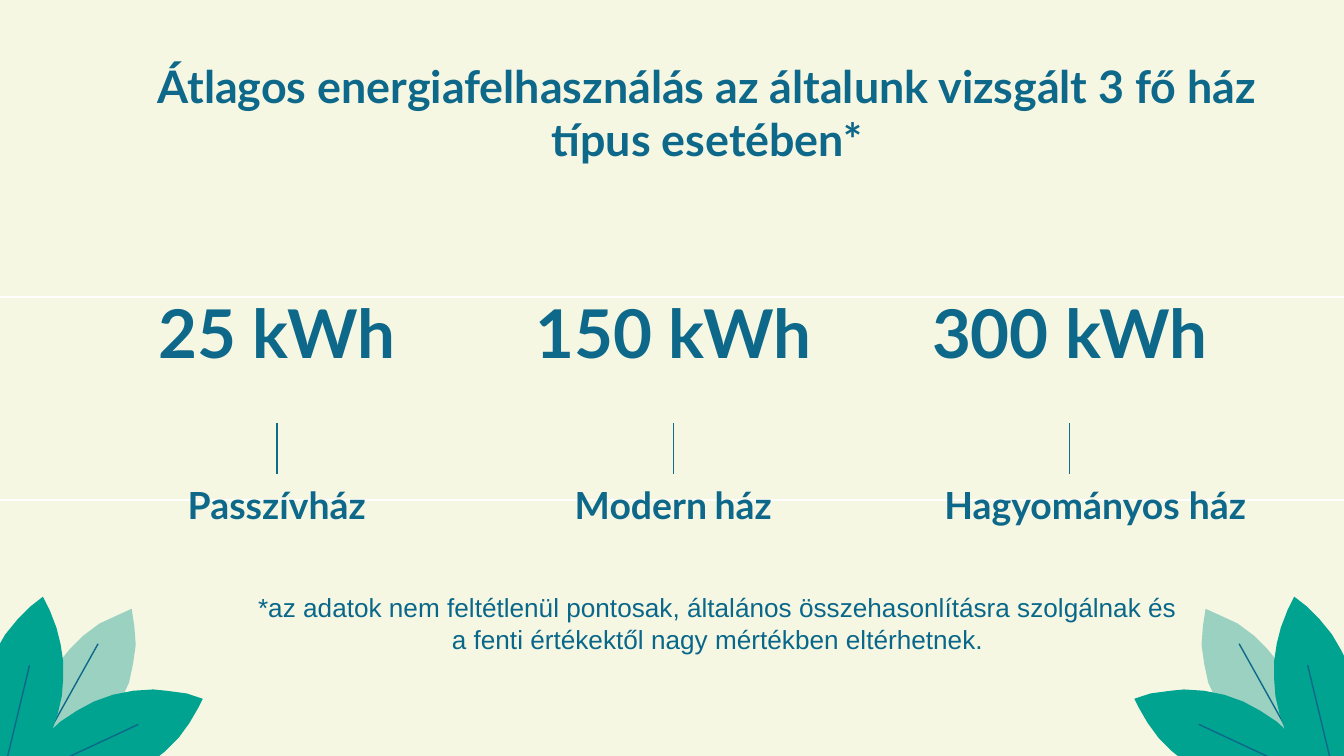
from pptx import Presentation
from pptx.dml.color import RGBColor
from pptx.enum.shapes import MSO_CONNECTOR
from pptx.enum.text import MSO_ANCHOR, PP_ALIGN
from pptx.oxml.ns import qn
from pptx.util import Inches, Pt

STRAIGHT = MSO_CONNECTOR.STRAIGHT
CENTER = PP_ALIGN.CENTER
TOP, MIDDLE = MSO_ANCHOR.TOP, MSO_ANCHOR.MIDDLE

# Content
TITLE = "Átlagos energiafelhasználás az általunk vizsgált 3 fő ház típus esetében*"
NOTE = ("*az adatok nem feltétlenül pontosak, általános összehasonlításra "
        "szolgálnak és a fenti értékektől nagy mértékben eltérhetnek.")
# Value, value box size, label runs, label box width
HOUSES = [
    ("25 kWh", (1.96, 0.56), ["Passzívház"], 1.96),
    ("150 kWh", (2.34, 0.71), ["Modern", " ", "ház"], 1.96),
    ("300 kWh", (2.34, 0.71), ["Hagyományos ház"], 2.34),
]

# Colours
CREAM, WHITE, BLACK = "F6F7E3", "FFFFFF", "000000"
BLUE, RULE_BLUE, NOTE_BLUE = "0D6889", "116C8B", "09678A"
MINT, GREEN = "9AD1C1", "00A290"

# Left-corner leaves: fill, outline, vein; the right corner is their mirror
MIRROR_SUM = 9.95
LEAVES = [
    (MINT,
     [(0.98, 4.53), (0.87, 4.58), (0.74, 4.64), (0.62, 4.73), (0.52, 4.83),
      (0.43, 4.94), (0.36, 5.06), (0.31, 5.19), (0.27, 5.33), (0.26, 5.47),
      (0.26, 5.61), (0.28, 5.74), (0.40, 5.69), (0.53, 5.63), (0.64, 5.54),
      (0.75, 5.45), (0.83, 5.33), (0.90, 5.21), (0.96, 5.08), (0.99, 4.94),
      (1.01, 4.80), (1.00, 4.66)],
     [(0.20, 5.74), (0.73, 4.79)]),
    (GREEN,
     [(0.32, 4.44), (0.23, 4.51), (0.13, 4.61), (0.04, 4.72), (-0.03, 4.84),
      (-0.09, 4.96), (-0.12, 5.09), (-0.15, 5.22), (-0.15, 5.36),
      (-0.14, 5.49), (-0.11, 5.63), (-0.08, 5.74), (0.19, 5.74), (0.26, 5.65),
      (0.33, 5.54), (0.39, 5.43), (0.43, 5.31), (0.46, 5.18), (0.47, 5.05),
      (0.47, 4.92), (0.45, 4.79), (0.42, 4.67), (0.37, 4.54)],
     [(0.03, 5.74), (0.22, 4.95)]),
    (GREEN,
     [(1.14, 5.13), (0.99, 5.14), (0.84, 5.17), (0.70, 5.22), (0.57, 5.29),
      (0.45, 5.37), (0.34, 5.47), (0.24, 5.58), (0.15, 5.74), (1.03, 5.73),
      (1.13, 5.67), (1.23, 5.59), (1.33, 5.49), (1.41, 5.38), (1.48, 5.26),
      (1.51, 5.20), (1.39, 5.16), (1.24, 5.14)],
     [(0.28, 5.74), (1.03, 5.39)]),
]


def rgb(color):
    return RGBColor.from_string(color)


def add_line(s, start, end, color):
    c = s.shapes.add_connector(STRAIGHT, *map(Inches, (*start, *end)))
    c.line.color.rgb = rgb(color)
    c.line.width = Pt(0.75)
    sp_pr = c._element.spPr
    sp_pr.append(sp_pr.makeelement(qn("a:effectLst"), {}))


def add_leaf(s, points, color):
    points = [(Inches(x), Inches(y)) for x, y in points]
    builder = s.shapes.build_freeform(*points[0])
    builder.add_line_segments(points[1:], close=True)
    sp = builder.convert_to_shape()
    sp.shadow.inherit = False
    sp.fill.solid()
    sp.fill.fore_color.rgb = rgb(color)
    sp.line.fill.background()


def place_text(sp, box, anchor, inset=0):
    sp.left, sp.top, sp.width, sp.height = map(Inches, box)
    tf = sp.text_frame
    tf.word_wrap = True
    tf.vertical_anchor = anchor
    tf.margin_left = tf.margin_right = Inches(inset)
    tf.margin_top = tf.margin_bottom = Inches(inset)
    p = tf.paragraphs[0]
    p.alignment = CENTER
    return p


def add_text(s, box, anchor, inset=0):
    return place_text(s.shapes.add_textbox(0, 0, 0, 0), box, anchor, inset)


def add_run(p, text, size, color=BLUE, font="Lato", bold=True):
    r = p.add_run()
    r.text = text
    r.font.size = Pt(size)
    r.font.name = font
    r.font.bold = bold
    r.font.color.rgb = rgb(color)


# Slide, 16:9
prs = Presentation()
prs.slide_width = Inches(10)
prs.slide_height = prs.slide_width * 9 // 16
s = prs.slides.add_slide(prs.slide_layouts[5])
s.background.fill.solid()
s.background.fill.fore_color.rgb = rgb(CREAM)

# Background rules
for y in (2.21, 3.72):
    add_line(s, (-0.07, y), (10.09, y), WHITE)

# Corner leaves
for mirrored in (False, True):
    for color, outline, vein in LEAVES:
        if mirrored:
            outline, vein = ([(MIRROR_SUM - x, y) for x, y in pts]
                             for pts in (outline, vein))
        add_leaf(s, outline, color)
        add_line(s, *vein, BLUE)

# Title
p = place_text(s.shapes.title, (1.08, 0.36, 8.36, 0.95), MIDDLE)
add_run(p, TITLE, 24)

# House columns: value, rule, label
LEFT, PITCH, COLUMN_W, VALUE_MID = 1.08, 2.95, 1.96, 2.47
for i, (value, (w, h), label, label_w) in enumerate(HOUSES):
    left = LEFT + i * PITCH
    mid = left + COLUMN_W / 2
    p = add_text(s, (mid - w / 2, VALUE_MID - h / 2, w, h), MIDDLE, 0.05)
    add_run(p, value, 36)
    add_line(s, (mid, 3.15), (mid, 3.53), RULE_BLUE)
    p = add_text(s, (left, 3.59, label_w, 0.5), TOP)
    p.space_after = Pt(16)
    for text in label:
        if text == " ":
            add_run(p, text, 14, BLACK, "Arial", False)
        else:
            add_run(p, text, 20)

# Footnote
p = add_text(s, (1.9, 4.4, 6.88, 0.5), TOP)
p.line_spacing = 1.01
add_run(p, NOTE, 14, NOTE_BLUE, "Arial", False)

prs.save("out.pptx")
